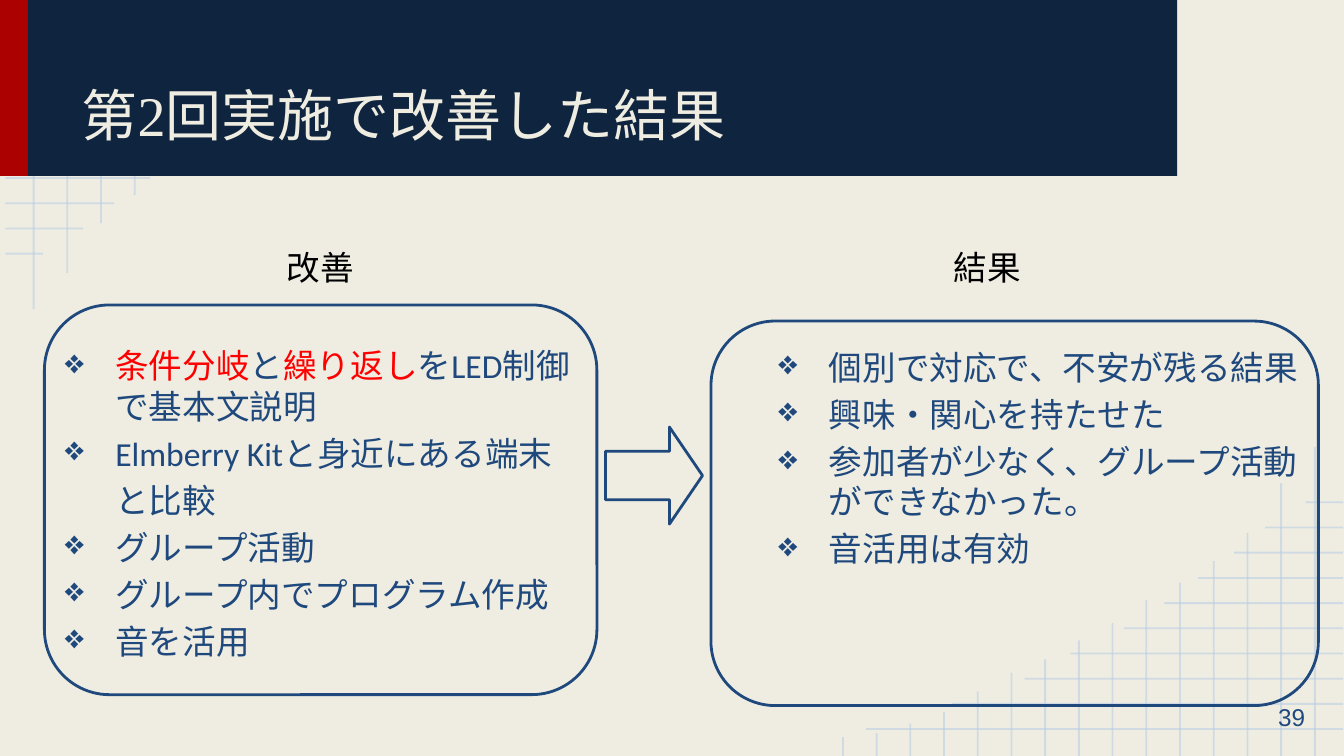
"""Build a slide comparing the improvements of a second session with their results."""
from dataclasses import dataclass

from lxml.etree import SubElement
from pptx import Presentation
from pptx.dml.color import RGBColor
from pptx.enum.shapes import MSO_CONNECTOR, MSO_SHAPE
from pptx.enum.text import MSO_ANCHOR, PP_ALIGN
from pptx.oxml.ns import qn
from pptx.util import Pt


@dataclass(frozen=True)
class Theme:
    paper: str = "EFEDE2"
    grid: str = "B7CCE4"
    red: str = "AB0101"
    navy: str = "0F243E"
    blue: str = "1F497D"
    accent: str = "FF0000"
    black: str = "000000"
    title_size: float = 30
    body_size: float = 18
    number_size: float = 13
    body_font: str = "Calibri"
    digit_font: str = "Times New Roman"
    label_font: str = "Lato"
    number_font: str = "Arial"


THEME = Theme()


@dataclass(frozen=True)
class Frame:
    left: float
    top: float
    width: float
    height: float

    def lengths(self) -> tuple:
        return Pt(self.left), Pt(self.top), Pt(self.width), Pt(self.height)


@dataclass(frozen=True)
class Span:
    text: str
    size: float = THEME.body_size
    font: str = THEME.body_font
    color: str = THEME.blue


@dataclass(frozen=True)
class Item:
    spans: tuple
    bullet: bool = True


@dataclass(frozen=True)
class Panel:
    label: str
    label_frame: Frame
    outline: Frame
    text_frame: Frame
    items: tuple


WIDTH, HEIGHT = 720, 405
MIRROR_WIDTH = 722.4
GRID_LEFT = 2.9
ROW_START, ROW_STEP = 14.4, 13.5
COLUMN_START, COLUMN_STEP = 18, 18.06
ROW_ENDS = (258.5, 212.4, 173.5, 149, 120.2, 98.6, 80.6, 61.2, 44.6, 23)
COLUMN_ENDS = (165.6, 146.2, 119.5, 104.4, 92.9, 83.5, 71.3, 61.9, 51.8,
               44.6, 34.6, 23.8, 17.3, 12.2, 10.1)

PANELS = (
    Panel("結果", Frame(454.3, 125.3, 149, 26.6), Frame(380.9, 172, 325.4, 206),
          Frame(401, 178.6, 305.3, 166.3), (
              Item((Span("個別で対応で、不安が残る結果"),)),
              Item((Span("興味・関心を持たせた"),)),
              Item((Span("参加者が少なく、グループ活動ができなかった。"),)),
              Item((Span("音活用は有効"),)))),
    Panel("改善", Frame(122.4, 125.3, 98.6, 26.6), Frame(23.8, 163.4, 296, 208.8),
          Frame(18.7, 177.8, 305.3, 208.8), (
              Item((Span("条件分岐", color=THEME.accent), Span("と"),
                    Span("繰り返し", color=THEME.accent), Span("をLED制御で基本文説明"))),
              Item((Span("Elmberry Kitと身近にある端末"),)),
              Item((Span("と比較"),), bullet=False),
              Item((Span("グループ活動"),)),
              Item((Span("グループ内でプログラム作成"),)),
              Item((Span("音を活用"),)))),
)


def draw_line(page, start: tuple, end: tuple) -> None:
    points = [Pt(value) for value in (*start, *end)]
    line = page.shapes.add_connector(MSO_CONNECTOR.STRAIGHT, *points)
    line.line.width = Pt(1)
    line.line.color.rgb = RGBColor.from_string(THEME.grid)
    color = next(line._element.spPr.iter(qn("a:srgbClr")))
    SubElement(color, qn("a:alpha"), val="54000")
    SubElement(line._element.spPr, qn("a:effectLst"))


def draw_grids(page) -> None:
    rows = [((GRID_LEFT, ROW_START + index * ROW_STEP), (end, ROW_START + index * ROW_STEP))
            for index, end in enumerate(ROW_ENDS)]
    columns = [((COLUMN_START + index * COLUMN_STEP, end), (COLUMN_START + index * COLUMN_STEP, 0))
               for index, end in enumerate(COLUMN_ENDS)]
    lines = rows + columns
    for start, end in lines:
        draw_line(page, start, end)
    for start, end in lines:
        opposite = [(min(MIRROR_WIDTH - x, WIDTH), HEIGHT - y) for x, y in (start, end)]
        draw_line(page, *opposite)


def draw_block(page, frame: Frame, color: str) -> None:
    block = page.shapes.add_shape(MSO_SHAPE.RECTANGLE, *frame.lengths())
    block.shadow.inherit = False
    block.fill.solid()
    block.fill.fore_color.rgb = RGBColor.from_string(color)
    block.line.fill.background()


def draw_outline(page, kind: MSO_SHAPE, frame: Frame, adjustments: tuple) -> None:
    outline = page.shapes.add_shape(kind, *frame.lengths())
    outline.shadow.inherit = False
    outline.fill.background()
    outline.line.color.rgb = RGBColor.from_string(THEME.blue)
    outline.line.width = Pt(1.5)
    for index, value in enumerate(adjustments):
        outline.adjustments[index] = value


def add_box(page, frame: Frame, anchor: MSO_ANCHOR = MSO_ANCHOR.TOP):
    text_frame = page.shapes.add_textbox(*frame.lengths()).text_frame
    text_frame.word_wrap = True
    text_frame.vertical_anchor = anchor
    text_frame.margin_left = text_frame.margin_right = Pt(7.2)
    text_frame.margin_top = text_frame.margin_bottom = Pt(7.2)
    return text_frame


def write_spans(paragraph, spans: tuple) -> None:
    for span in spans:
        run = paragraph.add_run()
        run.text = span.text
        run.font.size = Pt(span.size)
        run.font.name = span.font
        run.font.color.rgb = RGBColor.from_string(span.color)


def write_text(page, frame: Frame, spans: tuple, align: PP_ALIGN, anchor: MSO_ANCHOR) -> None:
    paragraph = add_box(page, frame, anchor).paragraphs[0]
    paragraph.alignment = align
    write_spans(paragraph, spans)


def write_items(page, frame: Frame, items: tuple) -> None:
    text_frame = add_box(page, frame)
    for index, item in enumerate(items):
        paragraph = text_frame.add_paragraph() if index else text_frame.paragraphs[0]
        paragraph.space_before = Pt(3.6)
        properties = paragraph._p.get_or_add_pPr()
        properties.set("marL", str(Pt(36 if item.bullet else 0)))
        properties.set("indent", str(Pt(-27 if item.bullet else 36)))
        if item.bullet:
            color = SubElement(properties, qn("a:buClr"))
            SubElement(color, qn("a:srgbClr"), val=THEME.blue)
            SubElement(properties, qn("a:buChar"), char="❖")
        write_spans(paragraph, item.spans)


def draw_panel(page, panel: Panel) -> None:
    draw_outline(page, MSO_SHAPE.ROUNDED_RECTANGLE, panel.outline, (0.167,))
    label = Span(panel.label, font=THEME.label_font, color=THEME.black)
    write_text(page, panel.label_frame, (label,), PP_ALIGN.CENTER, MSO_ANCHOR.TOP)
    write_items(page, panel.text_frame, panel.items)


def main() -> None:
    deck = Presentation()
    deck.slide_width, deck.slide_height = Pt(WIDTH), Pt(HEIGHT)
    page = deck.slides.add_slide(deck.slide_layouts[6])
    page.background.fill.solid()
    page.background.fill.fore_color.rgb = RGBColor.from_string(THEME.paper)
    draw_grids(page)
    draw_block(page, Frame(0, -0.7, 15, 95), THEME.red)
    draw_block(page, Frame(15, -0.7, 615.6, 95), THEME.navy)
    title = tuple(Span(text, THEME.title_size, font, THEME.paper) for text, font in (
        ("第", THEME.body_font), ("2", THEME.digit_font),
        ("回実施で改善した結果", THEME.body_font)))
    write_text(page, Frame(36.7, 6.5, 576, 80), title, PP_ALIGN.LEFT, MSO_ANCHOR.BOTTOM)
    number = Span("39", THEME.number_size, THEME.number_font)
    write_text(page, Frame(663, 363.6, 43.2, 41), (number,), PP_ALIGN.RIGHT, MSO_ANCHOR.MIDDLE)
    for panel in PANELS:
        draw_panel(page, panel)
    draw_outline(page, MSO_SHAPE.RIGHT_ARROW, Frame(324.4, 228.8, 52, 52), (0.5, 0.341))
    deck.save("out.pptx")


if __name__ == "__main__":
    main()
